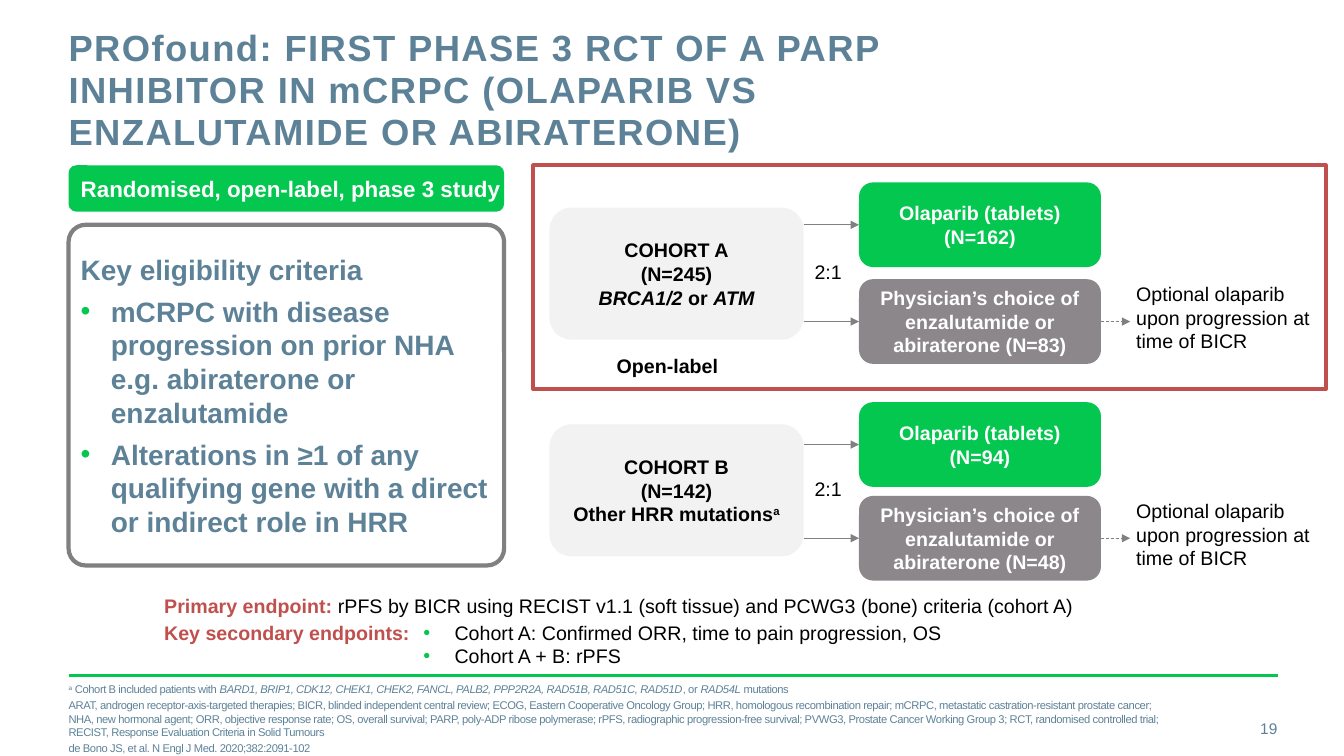
from dataclasses import dataclass

from lxml import etree
from pptx import Presentation
from pptx.dml.color import RGBColor
from pptx.enum.dml import MSO_LINE
from pptx.enum.shapes import MSO_CONNECTOR, MSO_SHAPE
from pptx.enum.text import MSO_ANCHOR, MSO_AUTO_SIZE, PP_ALIGN
from pptx.oxml.ns import qn
from pptx.shapes.autoshape import Shape
from pptx.shapes.connector import Connector
from pptx.slide import Slide
from pptx.util import Inches, Pt

LEFT, CENTER, RIGHT = PP_ALIGN.LEFT, PP_ALIGN.CENTER, PP_ALIGN.RIGHT
TOP, MIDDLE = MSO_ANCHOR.TOP, MSO_ANCHOR.MIDDLE
RECTANGLE, ROUNDED = MSO_SHAPE.RECTANGLE, MSO_SHAPE.ROUNDED_RECTANGLE
NO_AUTOFIT = MSO_AUTO_SIZE.NONE
STRAIGHT = MSO_CONNECTOR.STRAIGHT
DASH = MSO_LINE.DASH
LEFT_SIDE, RIGHT_SIDE = 1, 3
FONT = "Arial"
COLORS = {
    "slate": "5D8298",
    "green": "03C74F",
    "red": "C0504D",
    "gray": "808080",
    "taupe": "8B878B",
    "pale": "F2F2F2",
    "black": "000000",
    "white": "FFFFFF",
}
COHORT_LEFT, COHORT_WIDTH, COHORT_HEIGHT = 5.45, 2.52, 1.31
TREATMENT_LEFT, TREATMENT_WIDTH, TREATMENT_HEIGHT = 8.52, 2.4, 0.84

Box = tuple[float, float, float, float]


@dataclass(frozen=True)
class Run:
    text: str
    italic: bool = False
    superscript: bool = False
    bold: bool | None = None
    color: str | None = None


@dataclass(frozen=True)
class Paragraph:
    runs: tuple[Run, ...]
    before: float = 0
    after: float = 0
    indent: float = 0


@dataclass(frozen=True)
class Cohort:
    name: str
    patients: int
    mutations: tuple[Run, ...]
    top: float
    olaparib_top: float
    olaparib_patients: int
    physician_patients: int


COHORTS = (
    Cohort("COHORT A", 245,
           (Run("BRCA1/2", italic=True), Run(" or "), Run("ATM", italic=True)),
           2.06, 1.81, 162, 83),
    Cohort("COHORT B", 142,
           (Run("Other HRR mutations"), Run("a", superscript=True)),
           4.21, 3.99, 94, 48),
)


def color(name: str) -> RGBColor:
    return RGBColor.from_string(COLORS[name])


def line_of(text: str, before: float = 0, after: float = 0, indent: float = 0) -> Paragraph:
    return Paragraph((Run(text),), before, after, indent)


def write(shape: Shape, *paragraphs: Paragraph, size: float = 14, ink: str = "black",
          bold: bool = False, align: PP_ALIGN = LEFT, anchor: MSO_ANCHOR = TOP,
          margins: tuple[float, float] = (0.1, 0.05), wrap: bool = True,
          tracking: float = 0, line_spacing: float | None = None) -> None:
    frame = shape.text_frame
    frame.auto_size = NO_AUTOFIT
    frame.word_wrap = wrap
    frame.vertical_anchor = anchor
    frame.margin_left = frame.margin_right = Inches(margins[0])
    frame.margin_top = frame.margin_bottom = Inches(margins[1])
    for index, content in enumerate(paragraphs):
        paragraph = frame.add_paragraph() if index else frame.paragraphs[0]
        paragraph.alignment = align
        paragraph.space_before = Pt(content.before)
        paragraph.space_after = Pt(content.after)
        if line_spacing:
            paragraph.line_spacing = Pt(line_spacing)
        properties = paragraph._p.get_or_add_pPr()
        properties.set("marL", str(Inches(content.indent)))
        properties.set("indent", str(-Inches(content.indent)))
        if content.indent:
            bullet_color = etree.SubElement(properties, qn("a:buClr"))
            etree.SubElement(bullet_color, qn("a:srgbClr"), val=COLORS["green"])
            etree.SubElement(properties, qn("a:buFont"), typeface=FONT)
            etree.SubElement(properties, qn("a:buChar"), char="•")
        else:
            etree.SubElement(properties, qn("a:buNone"))
        for part in content.runs:
            for number, text in enumerate(part.text.split("\n")):
                if number:
                    paragraph.add_line_break()
                run = paragraph.add_run()
                run.text = text
                font = run.font
                font.name, font.size = FONT, Pt(size)
                font.bold = bold if part.bold is None else part.bold
                font.italic = part.italic
                font.color.rgb = color(part.color or ink)
                run_properties = run._r.get_or_add_rPr()
                if tracking:
                    run_properties.set("spc", str(round(tracking * 100)))
                if part.superscript:
                    run_properties.set("baseline", "30000")


def place(shape: Shape, box: Box) -> None:
    shape.left, shape.top, shape.width, shape.height = map(Inches, box)


def add_text(slide: Slide, box: Box, *paragraphs: Paragraph, **text_format) -> None:
    write(slide.shapes.add_textbox(*map(Inches, box)), *paragraphs, **text_format)


def add_panel(slide: Slide, box: Box, fill: str | None = None, outline: str | None = None,
              kind: MSO_SHAPE = ROUNDED) -> Shape:
    shape = slide.shapes.add_shape(kind, *map(Inches, box))
    shape.shadow.inherit = False
    if fill:
        shape.fill.solid()
        shape.fill.fore_color.rgb = color(fill)
    else:
        shape.fill.background()
    if outline:
        shape.line.color.rgb = color(outline)
        shape.line.width = Pt(3)
    else:
        shape.line.fill.background()
    return shape


def add_line(slide: Slide, start: float, end: float, y: float, ink: str = "gray",
             width: float = 0.75, arrow: bool = True, dashed: bool = False) -> Connector:
    connector = slide.shapes.add_connector(
        STRAIGHT, Inches(start), Inches(y), Inches(end), Inches(y))
    connector.line.color.rgb = color(ink)
    connector.line.width = Pt(width)
    if dashed:
        connector.line.dash_style = DASH
    if arrow:
        etree.SubElement(connector.line._get_or_add_ln(), qn("a:tailEnd"), type="triangle")
    etree.SubElement(connector._element.spPr, qn("a:effectLst"))
    return connector


def add_treatment(slide: Slide, top: float, fill: str, text: str) -> Shape:
    shape = add_panel(slide, (TREATMENT_LEFT, top, TREATMENT_WIDTH, TREATMENT_HEIGHT), fill)
    write(shape, line_of(text, after=6), ink="white", bold=True, align=CENTER, anchor=MIDDLE)
    arrow = add_line(slide, COHORT_LEFT + COHORT_WIDTH, TREATMENT_LEFT, top + TREATMENT_HEIGHT / 2)
    arrow.end_connect(shape, LEFT_SIDE)
    return shape


def add_cohort(slide: Slide, cohort: Cohort) -> None:
    top = cohort.top
    panel = add_panel(slide, (COHORT_LEFT, top, COHORT_WIDTH, COHORT_HEIGHT), "pale")
    write(panel, line_of(cohort.name), line_of(f"(N={cohort.patients})"),
          Paragraph(cohort.mutations), bold=True, align=CENTER, anchor=MIDDLE)
    add_text(slide, (7.98, top + 0.47, 0.88, 0.34), line_of("2:1"))
    add_treatment(slide, cohort.olaparib_top, "green",
                  f"Olaparib (tablets)\n(N={cohort.olaparib_patients})")
    physician = add_treatment(
        slide, top + 0.71, "taupe",
        f"Physician’s choice of enzalutamide or abiraterone (N={cohort.physician_patients})")
    crossover = add_line(slide, TREATMENT_LEFT + TREATMENT_WIDTH, 11.21,
                         top + 0.71 + TREATMENT_HEIGHT / 2, width=0.5, dashed=True)
    crossover.begin_connect(physician, RIGHT_SIDE)
    add_text(slide, (11.17, top + 0.69, 1.98, 0.81), line_of("Optional olaparib"),
             line_of("upon progression at time of BICR"))


def main() -> None:
    presentation = Presentation()
    presentation.slide_width, presentation.slide_height = Inches(13.33), Inches(7.5)
    slide = presentation.slides.add_slide(presentation.slide_layouts[1])
    title, footnotes = slide.placeholders
    place(title, (0.68, 0.27, 9.56, 0.88))
    write(title, line_of("PROfound: FIRST PHASE 3 RCT OF A PARP INHIBITOR IN mCRPC "
                         "(OLAPARIB VS ENZALUTAMIDE OR ABIRATERONE)"),
          size=26, ink="slate", bold=True, margins=(0, 0), tracking=1, line_spacing=30)
    place(footnotes, (0.68, 6.93, 11.66, 0.4))
    write(footnotes,
          Paragraph((Run("a", superscript=True), Run(" Cohort B included patients with "),
                     Run("BARD1, BRIP1, CDK12, CHEK1, CHEK2, FANCL, PALB2, PPP2R2A, "
                         "RAD51B, RAD51C, RAD51D", italic=True),
                     Run(", or "), Run("RAD54L", italic=True), Run(" mutations"))),
          line_of("ARAT, androgen receptor-axis-targeted therapies; BICR, blinded independent "
                  "central review; ECOG, Eastern Cooperative Oncology Group; HRR, homologous "
                  "recombination repair; mCRPC, metastatic castration-resistant prostate cancer;\n"
                  "NHA, new hormonal agent; ORR, objective response rate; OS, overall survival; "
                  "PARP, poly-ADP ribose polymerase; rPFS, radiographic progression-free survival; "
                  "PVWG3, Prostate Cancer Working Group 3; RCT, randomised controlled trial;\n"
                  "RECIST, Response Evaluation Criteria in Solid Tumours", before=2),
          line_of("de Bono JS, et al. N Engl J Med. 2020;382:2091-102", before=2),
          size=8, ink="slate", anchor=MIDDLE, margins=(0, 0), tracking=-0.3)
    add_line(slide, 0.68, 12.68, 6.7, ink="green", width=2, arrow=False)
    add_text(slide, (11.81, 7.03, 0.86, 0.4), line_of("19"), size=11, ink="slate",
             align=RIGHT, anchor=MIDDLE, margins=(0, 0))

    design = add_panel(slide, (0.68, 1.64, 4.32, 0.46), "green")
    write(design, line_of("Randomised, open-label, phase 3 study"), size=16, ink="white",
          bold=True, anchor=MIDDLE, wrap=False)
    eligibility = add_panel(slide, (0.68, 2.23, 4.32, 3.38), outline="gray")
    eligibility.adjustments[0] = 0.05
    write(eligibility, line_of("Key eligibility criteria", after=6),
          line_of("mCRPC with disease progression on prior NHA e.g. abiraterone or enzalutamide",
                  indent=0.3),
          line_of("Alterations in ≥1 of any qualifying gene with a direct or indirect role in HRR",
                  before=6, indent=0.3),
          size=20, ink="slate", bold=True, anchor=MIDDLE, margins=(0.07, 0.07))

    add_panel(slide, (5.29, 1.64, 7.86, 2.22), outline="red", kind=RECTANGLE)
    for cohort in COHORTS:
        add_cohort(slide, cohort)
    add_text(slide, (5.42, 3.46, 2.4, 0.34), line_of("Open-label"), bold=True, align=CENTER)

    add_text(slide, (1.53, 5.84, 10.42, 0.34),
             Paragraph((Run("Primary endpoint: ", bold=True, color="red"),
                        Run("rPFS by BICR using RECIST v1.1 (soft tissue) and PCWG3 (bone) "
                            "criteria (cohort A)"))))
    add_text(slide, (1.53, 6.11, 2.66, 0.57), line_of("Key secondary endpoints:"),
             ink="red", bold=True)
    add_text(slide, (4.1, 6.11, 6.92, 0.57),
             line_of("Cohort A: Confirmed ORR, time to pain progression, OS", indent=0.31),
             line_of("Cohort A + B: rPFS", indent=0.31))
    presentation.save("out.pptx")


if __name__ == "__main__":
    main()
